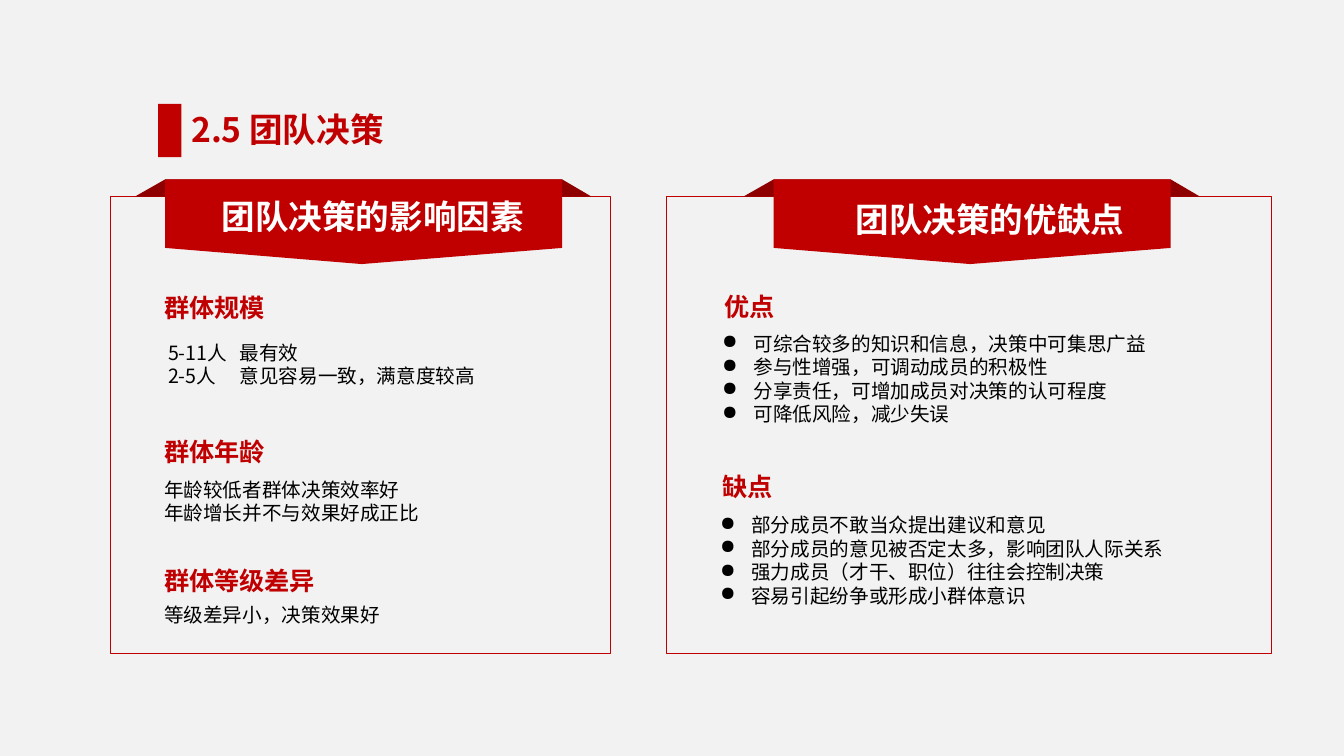
import pptx
import pptx.util
import pptx.dml.color
import pptx.enum.shapes
import pptx.enum.text
import pptx.oxml.ns
import lxml.etree

PX = 9144
FACE = "Noto Sans CJK SC"
COLORS = {"back": "F2F2F2", "red": "C00000", "dark": "8E0000", "white": "FFFFFF", "black": "000000"}
ALIGN = pptx.enum.text.PP_ALIGN
FORMS = {
    "title": {"size": pptx.util.Pt(24), "bold": True},
    "head": {"size": pptx.util.Pt(18), "bold": True},
    "body": {"size": pptx.util.Pt(14), "bold": False},
}
PANELS = [
    (110, 496, 164, "团队决策的影响因素", (210, 189, 320, 50)),
    (662, 600, 768, "团队决策的优缺点", (839, 192, 287, 50)),
]
HEADS = [
    ("群体规模", (153, 285, 120, 40)),
    ("群体年龄", (153, 428, 120, 40)),
    ("群体等级差异", (153, 556, 170, 40)),
    ("优点", (709, 284, 70, 40)),
    ("缺点", (707, 463, 70, 40)),
]
NOTES = [
    (["5-11人\t最有效", "2-5人\t意见容易一致，满意度较高"], (157, 333, 458, 57)),
    (["年龄较低者群体决策效率好", "年龄增长并不与效果好成正比"], (153, 469, 458, 57)),
    (["等级差异小，决策效果好"], (153, 593, 458, 33)),
]
LISTS = [
    (["可综合较多的知识和信息，决策中可集思广益", "参与性增强，可调动成员的积极性",
      "分享责任，可增加成员对决策的认可程度", "可降低风险，减少失误"], (707, 324, 556, 103)),
    (["部分成员不敢当众提出建议和意见", "部分成员的意见被否定太多，影响团队人际关系",
      "强力成员（才干、职位）往往会控制决策", "容易引起纷争或形成小群体意识"], (705, 504, 556, 103)),
]


def tint(name):
    """Return the named colour."""
    return pptx.dml.color.RGBColor.from_string(COLORS[name])


def scale(box):
    """Turn px lengths into EMU."""
    return [n * PX for n in box]


def add_tag(root, name, **attrs):
    """Append a drawing element with attributes."""
    node = lxml.etree.SubElement(root, pptx.oxml.ns.qn(name))
    for key, value in attrs.items():
        node.set(key, str(value))
    return node


def paint(shape, fill=None, line=None):
    """Set the fill and line of a shape."""
    shape.shadow.inherit = False
    if fill:
        shape.fill.solid()
        shape.fill.fore_color.rgb = tint(fill)
    else:
        shape.fill.background()
    if line:
        shape.line.color.rgb = tint(line)
        shape.line.width = pptx.util.Pt(0.75)
    else:
        shape.line.fill.background()


def add_rect(slide, box, **look):
    """Add a rectangle."""
    kind = pptx.enum.shapes.MSO_SHAPE.RECTANGLE
    paint(slide.shapes.add_shape(kind, *scale(box)), **look)


def add_poly(slide, points, fill):
    """Add a closed outline."""
    draft = slide.shapes.build_freeform(*points[0], scale=PX)
    draft.add_line_segments(points[1:], close=True)
    paint(draft.convert_to_shape(), fill)


def add_text(slide, lines, box, form, color, align=ALIGN.JUSTIFY, wrap=True, dots=False):
    """Add a text box with one paragraph a line."""
    frame = slide.shapes.add_textbox(*scale(box)).text_frame
    frame.word_wrap = wrap
    frame.auto_size = pptx.enum.text.MSO_AUTO_SIZE.SHAPE_TO_FIT_TEXT
    for i, line in enumerate(lines):
        para = frame.add_paragraph() if i else frame.paragraphs[0]
        para.alignment = align
        props = para._p.get_or_add_pPr()
        if dots:
            props.set("marL", str(31 * PX))
            props.set("indent", str(-31 * PX))
            add_tag(props, "a:buChar", char="●")
        if "\t" in line:
            tabs = add_tag(props, "a:tabLst")
            add_tag(tabs, "a:tab", pos=71 * PX, algn="l")
        run = para.add_run()
        run.text = line
        for key, value in FORMS[form].items():
            setattr(run.font, key, value)
        run.font.name = FACE
        run.font.color.rgb = tint(color)
        add_tag(run._r.get_or_add_rPr(), "a:ea", typeface=FACE)


def add_panel(slide, left, width, edge, label, box):
    """Add a framed panel with a ribbon label."""
    top, end = 178, edge + 394
    add_rect(slide, (left, 195, width, 453), line="red")
    add_poly(slide, [(edge, top), (end, top), (end + 29, 195), (edge - 30, 195)], "dark")
    add_poly(slide, [(edge, top), (end, top), (end, 246), (edge + 195, 262), (edge, 246)], "red")
    add_text(slide, [label], box, "title", "white", ALIGN.CENTER, wrap=False)


def main():
    """Build the slide and save it."""
    deck = pptx.Presentation()
    deck.slide_width, deck.slide_height = scale((1334, 750))
    slide = deck.slides.add_slide(deck.slide_layouts[6])
    slide.background.fill.solid()
    slide.background.fill.fore_color.rgb = tint("back")
    for panel in PANELS:
        add_panel(slide, *panel)
    for head, box in HEADS:
        add_text(slide, [head], box, "head", "red", wrap=False)
    for lines, box in NOTES:
        add_text(slide, lines, box, "body", "black")
    for lines, box in LISTS:
        add_text(slide, lines, box, "body", "black", dots=True)
    add_text(slide, ["2.5 团队决策"], (180, 103, 512, 50), "title", "red", ALIGN.LEFT)
    add_rect(slide, (157, 103, 23, 53), fill="red")
    deck.save("out.pptx")


if __name__ == "__main__":
    main()
